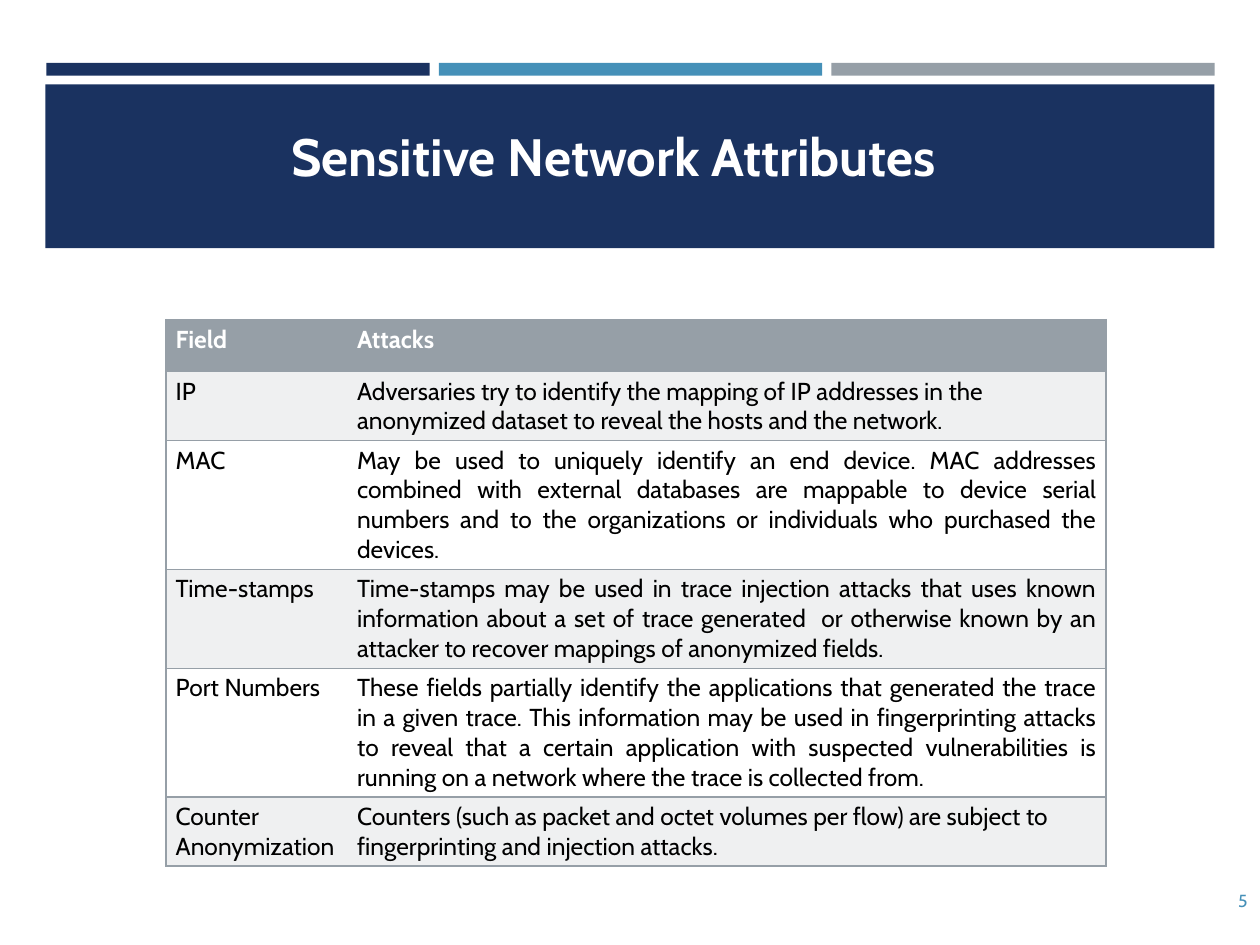
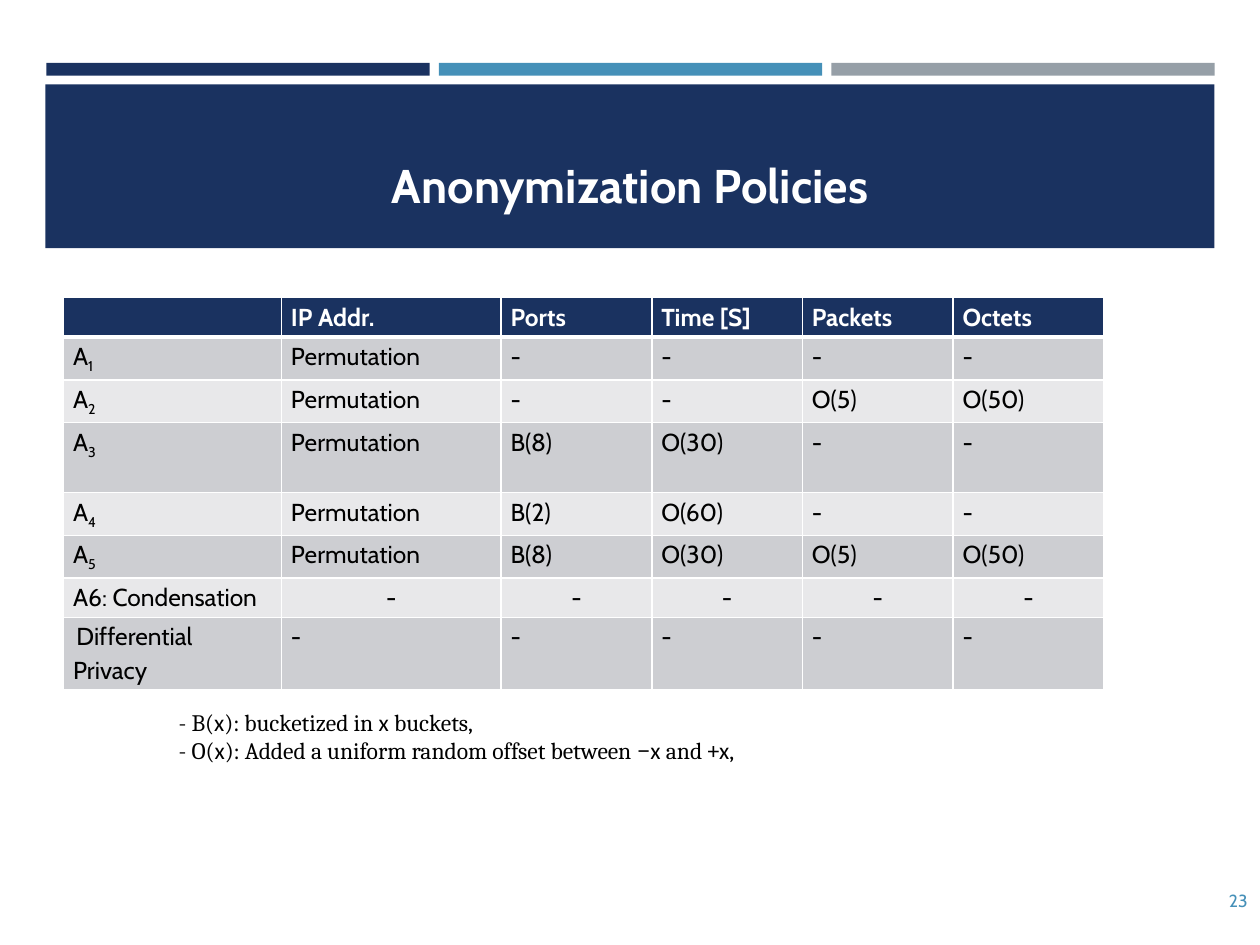
from lxml import etree
from pptx import Presentation
from pptx.dml.color import RGBColor
from pptx.enum.shapes import MSO_SHAPE
from pptx.enum.text import MSO_ANCHOR, MSO_AUTO_SIZE, PP_ALIGN
from pptx.oxml.ns import qn
from pptx.util import Pt

NAVY = RGBColor(0x1A, 0x32, 0x60)
BLUE = RGBColor(0x45, 0x90, 0xB8)
GREY = RGBColor(0x96, 0x9F, 0xA7)
PALE = RGBColor(0xEF, 0xF0, 0xF1)
DARK = RGBColor(0xCD, 0xCE, 0xD2)
LIGHT = RGBColor(0xE8, 0xE8, 0xEA)
WHITE = RGBColor(0xFF, 0xFF, 0xFF)
BLACK = RGBColor(0, 0, 0)

RECT = MSO_SHAPE.RECTANGLE
MIDDLE, BOTTOM = MSO_ANCHOR.MIDDLE, MSO_ANCHOR.BOTTOM
LEFT, CENTER = PP_ALIGN.LEFT, PP_ALIGN.CENTER
RIGHT, JUSTIFY = PP_ALIGN.RIGHT, PP_ALIGN.JUSTIFY
NO_FIT = MSO_AUTO_SIZE.NONE
TITLE_ONLY = 5
NO_STYLE = "{2D5ABB26-0587-4C30-8999-92F81FD0307C}"


def write(frame, *lines, size=14, color=BLACK, bold=False, font="Cabin", align=LEFT):
    """Each line is a string or a list of (text, options) runs."""
    for num, line in enumerate(lines):
        para = frame.add_paragraph() if num else frame.paragraphs[0]
        para.alignment = align
        if not line:
            etree.SubElement(para._p, qn("a:endParaRPr"), sz=str(size * 100))
            continue
        for text, opts in [(line, {})] if isinstance(line, str) else line:
            run = para.add_run()
            run.text = text
            run.font.size = Pt(size)
            run.font.bold = bold
            run.font.name = opts.get("font", font)
            run.font.color.rgb = color
            if opts.get("sub"):
                run._r.get_or_add_rPr().set("baseline", "-25000")


def edge(cell, side, width, color):
    line = etree.SubElement(cell._tc.get_or_add_tcPr(), qn(f"a:ln{side}"), w=str(Pt(width)))
    fill = etree.SubElement(line, qn("a:solidFill"))
    etree.SubElement(fill, qn("a:srgbClr"), val=str(color))


class Deck:
    def __init__(self):
        self.show = Presentation()
        self.show.slide_width, self.show.slide_height = Pt(720), Pt(540)
        self.slide = None

    def page(self, number):
        self.slide = self.show.slides.add_slide(self.show.slide_layouts[TITLE_ONLY])
        for num, color in enumerate((NAVY, BLUE, GREY)):
            self.band(26.5 + 224.3 * num, 36, 219, 7.2, color)
        self.band(26, 48.3, 668, 93.5, NAVY)
        self.note(558, 500.4, 162, 28.8, number, size=10, color=BLUE,
                  align=RIGHT, anchor=MIDDLE)

    def band(self, x, y, w, h, color):
        shape = self.slide.shapes.add_shape(RECT, Pt(x), Pt(y), Pt(w), Pt(h))
        shape.shadow.inherit = False
        shape.fill.solid()
        shape.fill.fore_color.rgb = color
        shape.line.fill.background()

    def title(self, x, y, w, h, text, size, anchor, wrap=True, pad=3.6):
        shape = self.slide.shapes.title
        self.slide.shapes._spTree.append(shape._element)  # bring above the bands
        shape.left, shape.top, shape.width, shape.height = Pt(x), Pt(y), Pt(w), Pt(h)
        frame = shape.text_frame
        frame.auto_size, frame.word_wrap = NO_FIT, wrap
        frame.vertical_anchor = anchor
        frame.margin_top = frame.margin_bottom = Pt(pad)
        write(frame, text, size=size, color=WHITE, bold=True, align=CENTER)

    def note(self, x, y, w, h, *lines, anchor=None, **style):
        frame = self.slide.shapes.add_textbox(Pt(x), Pt(y), Pt(w), Pt(h)).text_frame
        frame.word_wrap = True
        frame.vertical_anchor = anchor
        write(frame, *lines, **style)

    def table(self, x, y, widths, heights, data, head, bands, rim, sides, align):
        """sides and align give edge widths and alignment for a row and column."""
        grid = self.slide.shapes.add_table(
            len(heights), len(widths), Pt(x), Pt(y), Pt(sum(widths)), Pt(sum(heights))).table
        grid._tbl.tblPr.find(qn("a:tableStyleId")).text = NO_STYLE
        for col, width in zip(grid.columns, widths):
            col.width = Pt(width)
        for row, (line, height) in enumerate(zip(data, heights)):
            grid.rows[row].height = Pt(height)
            for col, text in enumerate(line):
                cell = grid.cell(row, col)
                cell.margin_left = cell.margin_right = Pt(5.4)
                cell.margin_top = cell.margin_bottom = Pt(2.7)
                for side, width in zip("LRTB", sides(row, col)):
                    if width:
                        edge(cell, side, width, rim)
                cell.fill.solid()
                cell.fill.fore_color.rgb = bands[(row + 1) % 2] if row else head
                write(cell.text_frame, text, bold=row == 0,
                      color=BLACK if row else WHITE, align=align(row, col))


ATTACKS = [
    ("Field", "Attacks"),
    ("IP", "Adversaries try to identify the mapping of IP addresses in the "
     "anonymized dataset to reveal the hosts and the network."),
    ("MAC", "May be used to uniquely identify an end device. MAC addresses combined "
     "with external databases are mappable to device serial numbers and to the "
     "organizations or individuals who purchased the devices."),
    ("Time-stamps", "Time-stamps may be used in trace injection attacks that uses known "
     "information about a set of trace generated  or otherwise known by an attacker "
     "to recover mappings of anonymized fields."),
    ("Port Numbers", "These fields partially identify the applications that generated the "
     "trace in a given trace. This information may be used in fingerprinting attacks "
     "to reveal that a certain application with suspected vulnerabilities is running "
     "on a network where the trace is collected from."),
    ("Counter Anonymization", "Counters (such as packet and octet volumes per flow) are "
     "subject to fingerprinting and injection attacks."),
]

SUB = {"sub": True}
RULES = [
    ("-", "-", "-", "-"),
    ("-", "-", "O(5)", "O(50)"),
    ("B(8)", "O(30)", "-", "-"),
    ("B(2)", "O(60)", "-", "-"),
    ("B(8)", "O(30)", "O(5)", "O(50)"),
]
POLICIES = [
    ("", "IP Addr.", "Ports", "Time [S]", "Packets", "Octets"),
    *(([("A", {}), (str(num), SUB)], "Permutation", *rule)
      for num, rule in enumerate(RULES, 1)),
    ("A6: Condensation", *"-----"),
    ([(" ", SUB), ("Differential Privacy", {})], *"-----"),
]

SANS, LATO = {"font": "Calibri"}, {"font": "Lato"}
KEY = [
    [("- B(", {}), ("x", SANS), ("): bucketized in ", {}), ("x ", SANS), ("buckets,", {})],
    [("- O(", {}), ("x", SANS), ("): Added a uniform random offset between ", {}),
     ("−", LATO), ("x ", SANS), ("and ", {}), ("+x", SANS), (",", {})],
]


def main():
    deck = Deck()

    # Sensitive attributes
    deck.page("5")
    deck.title(138.2, 70.6, 432, 36, "Sensitive Network Attributes ", 30, MIDDLE,
               wrap=False, pad=0)
    deck.table(95, 182.7, (103.7, 433.4), (29.7, 38.2, 54, 54, 70, 38.2), ATTACKS,
               GREY, (PALE, WHITE), GREY,
               sides=lambda row, col: (col == 0, col == 1, 1, 1),
               align=lambda row, col: JUSTIFY if col and row in (2, 3, 4) else LEFT)

    # Policies and their key
    deck.page("23")
    deck.title(36, 57.6, 648, 67.7, "Anonymization Policies", 27, BOTTOM)
    deck.table(36.4, 170.1, (124.5, 125.5, *[86.1] * 4),
               (21.6, 21.6, 21.6, 40, 21.6, 21.6, 21.6, 38), POLICIES,
               NAVY, (DARK, LIGHT), WHITE,
               sides=lambda row, col: (1, 1, 3 if row == 1 else 1, 1 if row else 3),
               align=lambda row, col: CENTER if col and row == 6 else LEFT)
    deck.note(95, 401, 625, 40.3, *KEY, size=13.5, font="Cambria")

    deck.show.save("out.pptx")


if __name__ == "__main__":
    main()
